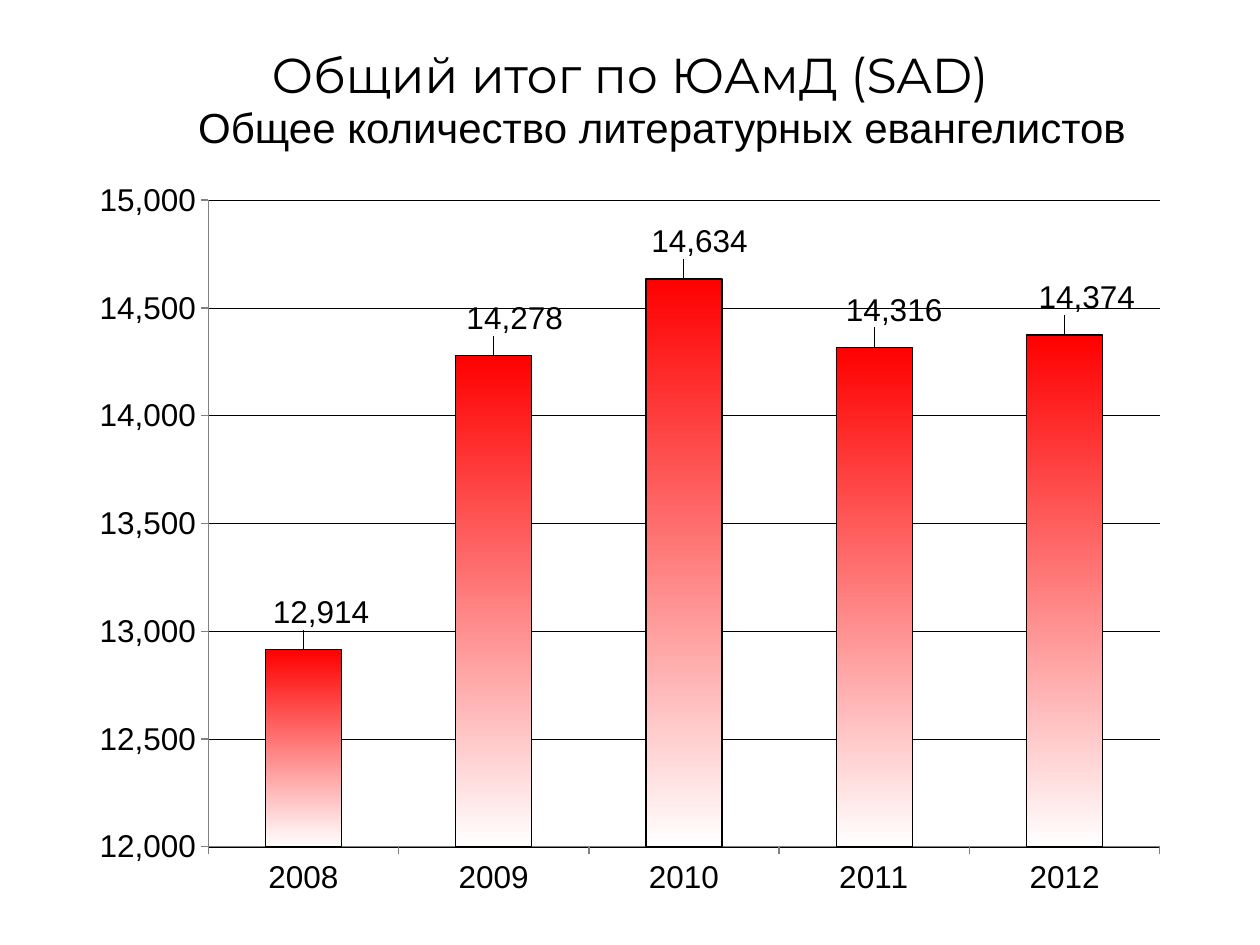
from dataclasses import dataclass

from lxml.etree import SubElement
from pptx import Presentation
from pptx.chart.data import CategoryChartData
from pptx.dml.color import RGBColor
from pptx.enum.chart import XL_CHART_TYPE, XL_LABEL_POSITION, XL_TICK_MARK
from pptx.enum.text import MSO_ANCHOR, MSO_AUTO_SIZE, PP_ALIGN
from pptx.oxml.ns import qn
from pptx.util import Pt


@dataclass(frozen=True)
class Theme:
    ink: RGBColor = RGBColor(0, 0, 0)
    axis: RGBColor = RGBColor(0x80, 0x80, 0x80)
    red: RGBColor = RGBColor(0xFF, 0, 0)
    white: RGBColor = RGBColor(0xFF, 0xFF, 0xFF)
    head: str = "Montserrat"
    body: str = "Arial"
    big: int = 28
    mid: int = 24
    small: int = 18


THEME = Theme()
COUNT = "#,##0"
YEARS = ["2008", "2009", "2010", "2011", "2012"]
TOTALS = [12914, 14278, 14634, 14316, 14374]
# Label shifts from the bar tops, as shares of the chart size
SHIFTS = [(0.016, -0.02), (0.019, -0.02), (0.014, -0.02),
          (0.018, -0.02), (0.02, -0.02)]


def apply(item, form):
    for name, value in form.items():
        setattr(item, name, value)


def style(font, face, size):
    apply(font, {"name": face, "size": Pt(size), "bold": False})
    font.color.rgb = THEME.ink


def stroke(line, color, width):
    line.color.rgb = color
    line.width = Pt(width)


def write(shape, box, text, face, size):
    """Place a shape and fill it with one centred line of text."""
    apply(shape, dict(zip(("left", "top", "width", "height"), map(Pt, box))))
    frame = shape.text_frame
    apply(frame, {"word_wrap": True, "auto_size": MSO_AUTO_SIZE.NONE,
                  "vertical_anchor": MSO_ANCHOR.TOP})
    para = frame.paragraphs[0]
    para.text = text
    para.alignment = PP_ALIGN.CENTER
    style(para.runs[0].font, face, size)


def place(node, **values):
    """Add a manual layout to a chart part."""
    manual = SubElement(node, qn("c:manualLayout"))
    for tag, value in values.items():
        SubElement(manual, qn(f"c:{tag}")).set("val", str(value))


def paint(fill):
    """Fade from red at the top to white at the bottom."""
    fill.gradient()
    fill.gradient_angle = 270
    tones = ((0, THEME.red), (1, THEME.white))
    for stop, (spot, color) in zip(fill.gradient_stops, tones):
        stop.position = spot
        stop.color.rgb = color


def label(series):
    """Show each value a little above and right of its bar."""
    for spot, (right, down) in enumerate(SHIFTS):
        tag = series.points[spot].data_label
        style(tag.font, THEME.body, THEME.small)
        tag.position = XL_LABEL_POSITION.OUTSIDE_END
    for node, (right, down) in zip(series._element.iter(qn("c:dLbl")), SHIFTS):
        layout = SubElement(node, qn("c:layout"))
        node.insert(1, layout)
        place(layout, x=right, y=down)


def add_bars(slide):
    data = CategoryChartData(number_format=COUNT)
    data.categories = YEARS
    data.add_series("Series 1", TOTALS)
    box = map(Pt, (44.64, 95.76, 630.72, 423.36))
    chart = slide.shapes.add_chart(
        XL_CHART_TYPE.COLUMN_CLUSTERED, *box, data).chart
    apply(chart, {"has_legend": False, "has_title": False})
    style(chart.font, THEME.body, THEME.small)

    # Bars
    plot = chart.plots[0]
    apply(plot, {"gap_width": 150, "vary_by_categories": False})
    series = plot.series[0]
    paint(series.format.fill)
    stroke(series.format.line, THEME.ink, 0.75)
    label(series)

    # Axes
    for axis in (chart.category_axis, chart.value_axis):
        axis.major_tick_mark = XL_TICK_MARK.OUTSIDE
        stroke(axis.format.line, THEME.axis, 0.75)
        style(axis.tick_labels.font, THEME.body, THEME.small)
    scale = chart.value_axis
    apply(scale, {"minimum_scale": 12000, "maximum_scale": 15000,
                  "major_unit": 500, "has_major_gridlines": True})
    apply(scale.tick_labels, {"number_format": COUNT,
                              "number_format_is_linked": False})
    stroke(scale.major_gridlines.format.line, THEME.ink, 0.25)

    # Plot area
    area = chart._chartSpace.find(".//" + qn("c:plotArea"))
    layout = area.find(qn("c:layout"))
    if layout is None:
        layout = SubElement(area, qn("c:layout"))
        area.insert(0, layout)
    place(layout, layoutTarget="inner", xMode="edge", yMode="edge",
          x=0.118, y=0.044, w=0.862, h=0.873)


def main():
    deck = Presentation()
    apply(deck, {"slide_width": Pt(720), "slide_height": Pt(540)})
    slide = deck.slides.add_slide(deck.slide_layouts[5])

    # Chart
    add_bars(slide)

    # Headings
    write(slide.shapes.title, (36, 21.6, 648, 90),
          "Общий итог по ЮАмД (SAD)", THEME.head, THEME.big)
    box = (102.24, 54.72, 552.24, 36)
    write(slide.shapes.add_textbox(*map(Pt, box)), box,
          "Общее количество литературных евангелистов",
          THEME.body, THEME.mid)

    deck.save("out.pptx")


if __name__ == "__main__":
    main()
